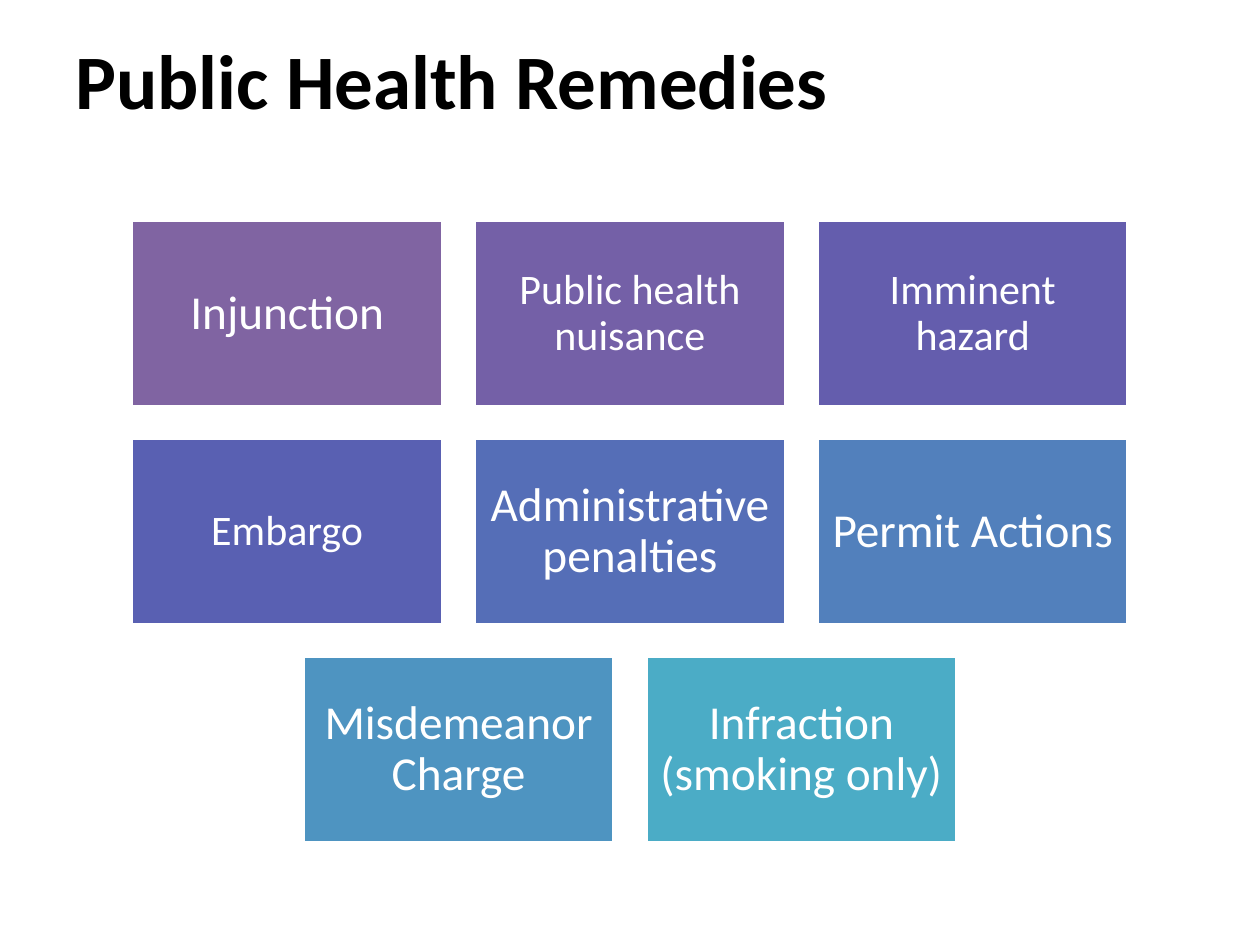
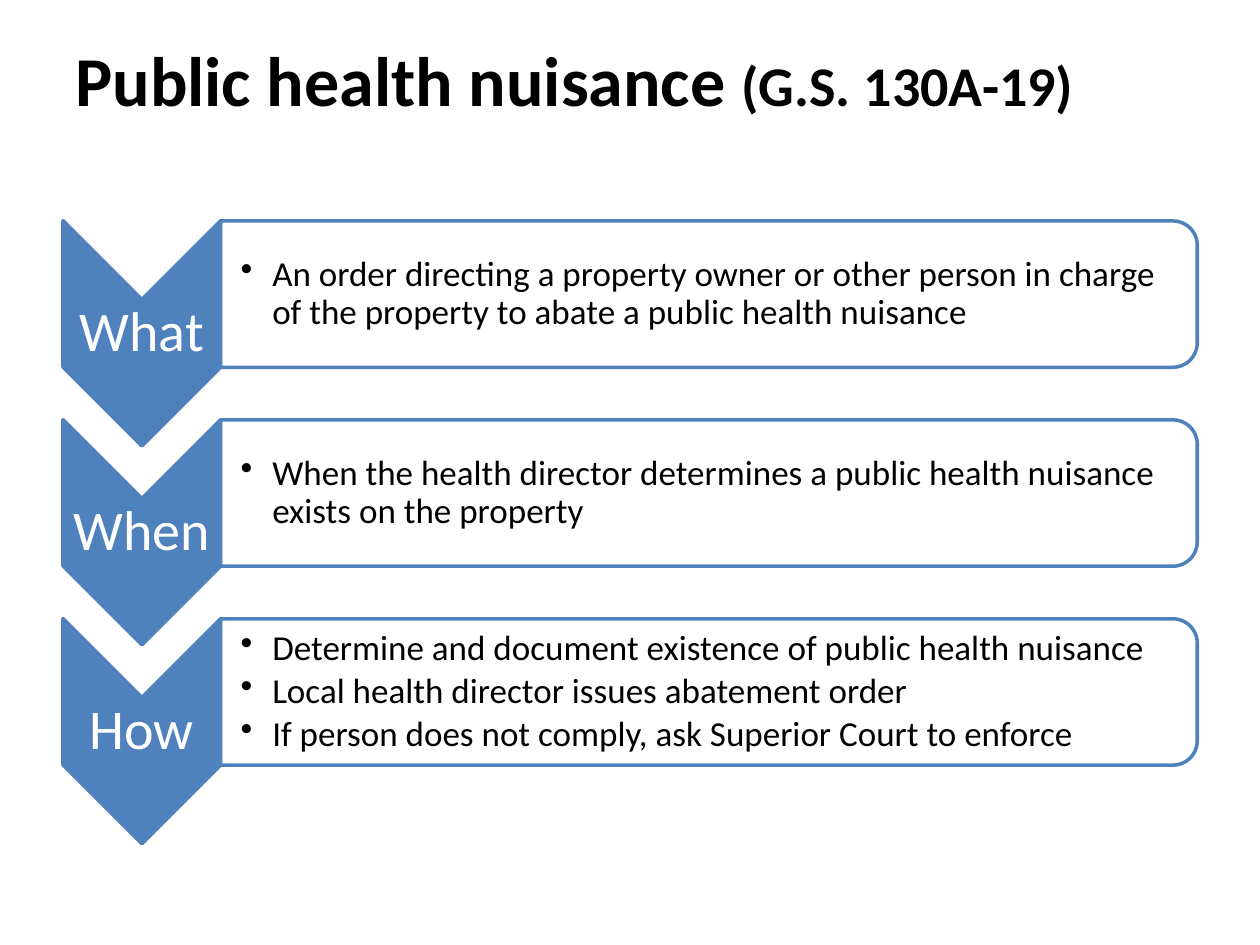
import pptx
import pptx.util
import pptx.dml.color
import pptx.enum.shapes
import pptx.enum.text
import lxml.etree

Cm = pptx.util.Cm
Pt = pptx.util.Pt
Shape = pptx.enum.shapes.MSO_SHAPE
Align = pptx.enum.text.PP_ALIGN
Anchor = pptx.enum.text.MSO_ANCHOR

FONT = "Calibri"
BLACK, WHITE, BLUE = "000000", "FFFFFF", "4F81BD"
NS = "http://schemas.openxmlformats.org/drawingml/2006/main"


def paint(target, color):
    if hasattr(target, "solid"):
        target.solid()
        target = target.fore_color
    target.rgb = pptx.dml.color.RGBColor.from_string(color)


def write(box, lines, size, color, align=Align.LEFT, pad=0.25, bullet=False):
    frame = box.text_frame
    frame.word_wrap = True
    frame.vertical_anchor = Anchor.MIDDLE
    frame.margin_left = frame.margin_right = Cm(pad)
    frame.margin_top = frame.margin_bottom = Cm(pad)
    frame.text = "\n".join(lines)
    for para in frame.paragraphs:
        para.alignment = align
        if bullet:
            props = para._p.get_or_add_pPr()
            props.set("marL", str(Cm(0.64)))
            props.set("indent", str(-Cm(0.64)))
            lxml.etree.SubElement(props, f"{{{NS}}}buChar", char="•")
            para.space_after = Pt(3)
        para.line_spacing = 0.9
        para.font.name = FONT
        para.font.size = Pt(size)
        paint(para.font.color, color)
    return frame


deck = pptx.Presentation()
deck.slide_width, deck.slide_height = Cm(25.4), Cm(19.05)

titles = [
    [("Public Health Remedies", 44)],
    [("Public health nuisance ", 40), ("(G.S. 130A-19)", 32)],
]
slides = []
for parts in titles:
    slide = deck.slides.add_slide(deck.slide_layouts[6])
    box = slide.shapes.add_textbox(Cm(1.27), 0, Cm(22.86), Cm(3.18))
    para = write(box, [""], parts[0][1], BLACK).paragraphs[0]
    para.line_spacing = 1.0
    for text, size in parts:
        run = para.add_run()
        run.text = text
        run.font.name = FONT
        run.font.size = Pt(size)
        run.font.bold = True
        paint(run.font.color, BLACK)
    slides.append(slide)

tiles, steps = slides

rows = [
    [("Injunction", 27, "8064A2"), ("Public health nuisance", 24, "7460A7"),
     ("Imminent hazard", 24, "645DAD")],
    [("Embargo", 24, "5960B2"), ("Administrative penalties", 27, "556EB7"),
     ("Permit Actions", 27, "5280BC")],
    [("Misdemeanor Charge", 27, "4E94C1"), ("Infraction (smoking only)", 27, "4BACC6")],
]
wide, high, gap = 6.27, 3.76, 0.64
for i, row in enumerate(rows):
    left = (25.4 - len(row) * (wide + gap) + gap) / 2
    for j, (text, size, color) in enumerate(row):
        tile = tiles.shapes.add_shape(
            Shape.RECTANGLE, Cm(left + j * (wide + gap)), Cm(4.45 + i * 4.39),
            Cm(wide), Cm(high))
        tile.shadow.inherit = False
        paint(tile.fill, color)
        paint(tile.line.color, WHITE)
        tile.line.width = Pt(2)
        write(tile, [text], size, WHITE, Align.CENTER, size * 0.01)

items = [
    ("What", ["An order directing a property owner or other person in charge "
              "of the property to abate a public health nuisance"]),
    ("When", ["When the health director determines a public health nuisance "
              "exists on the property"]),
    ("How", ["Determine and document existence of public health nuisance",
             "Local health director issues abatement order",
             "If person does not comply, ask Superior Court to enforce"]),
]
for i, (name, lines) in enumerate(items):
    mid = 5.93 + i * 4.01
    forms = [
        (Shape.CHEVRON, 2.86, mid + 0.79, 4.54, 3.18, BLUE),
        (Shape.ROUND_2_SAME_RECTANGLE, 14.29, mid, 2.95, 19.69, WHITE),
    ]
    for kind, x, y, w, h, color in forms:
        form = steps.shapes.add_shape(kind, Cm(x - w / 2), Cm(y - h / 2), Cm(w), Cm(h))
        form.rotation = 90
        form.shadow.inherit = False
        paint(form.fill, color)
        paint(form.line.color, BLUE)
        form.line.width = Pt(2)
    tint = form._element.spPr.find(f"{{{NS}}}solidFill")[0]
    lxml.etree.SubElement(tint, f"{{{NS}}}alpha", val="90000")
    label = steps.shapes.add_textbox(Cm(1.27), Cm(mid + 0.11), Cm(3.18), Cm(1.37))
    write(label, [name], 32, WHITE, Align.CENTER, 0.05)
    body = steps.shapes.add_textbox(Cm(4.45), Cm(mid - 1.33), Cm(19.53), Cm(2.66))
    write(body, lines, 20, BLACK, pad=0.03, bullet=True).margin_left = Cm(0.4)

deck.save("out.pptx")
